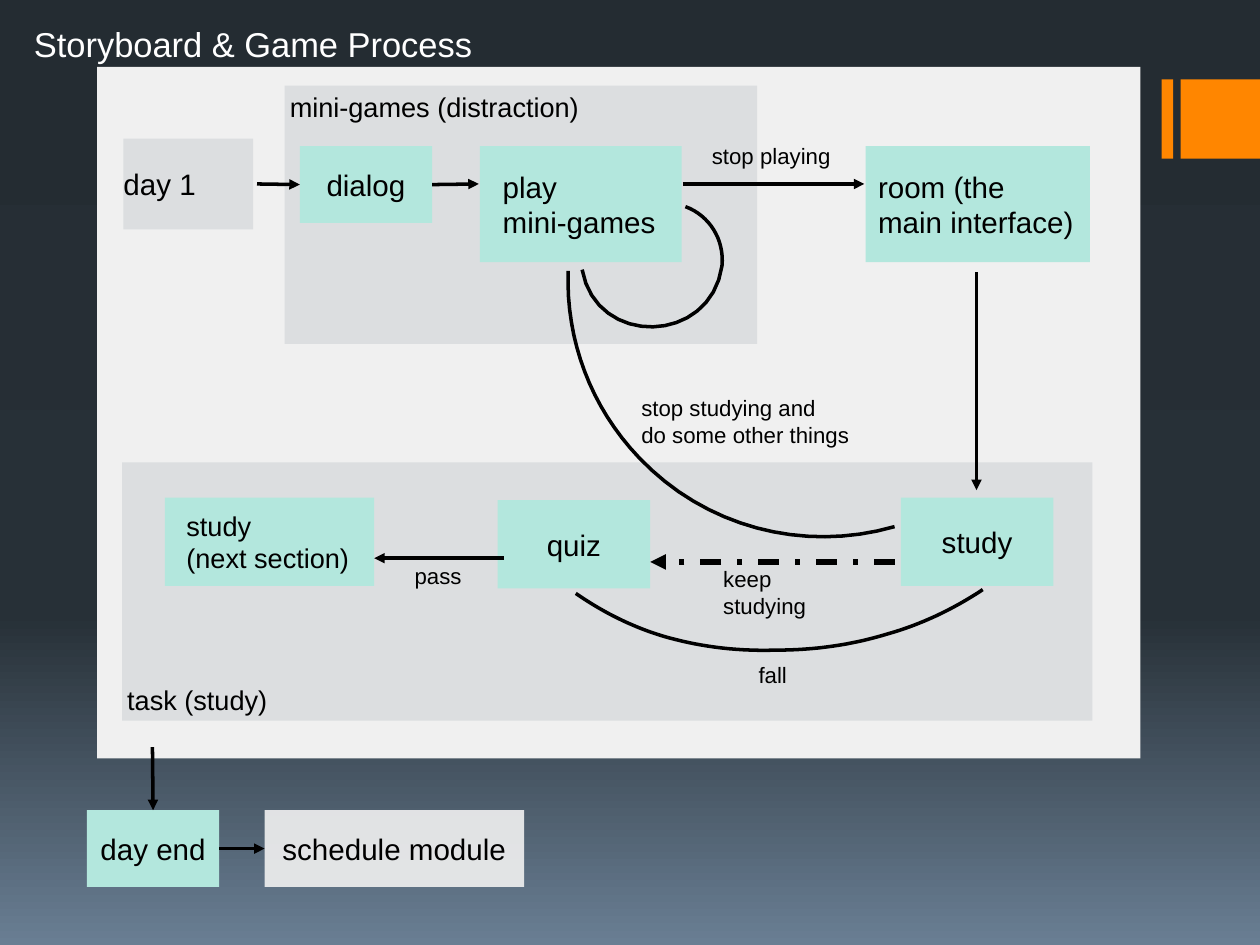
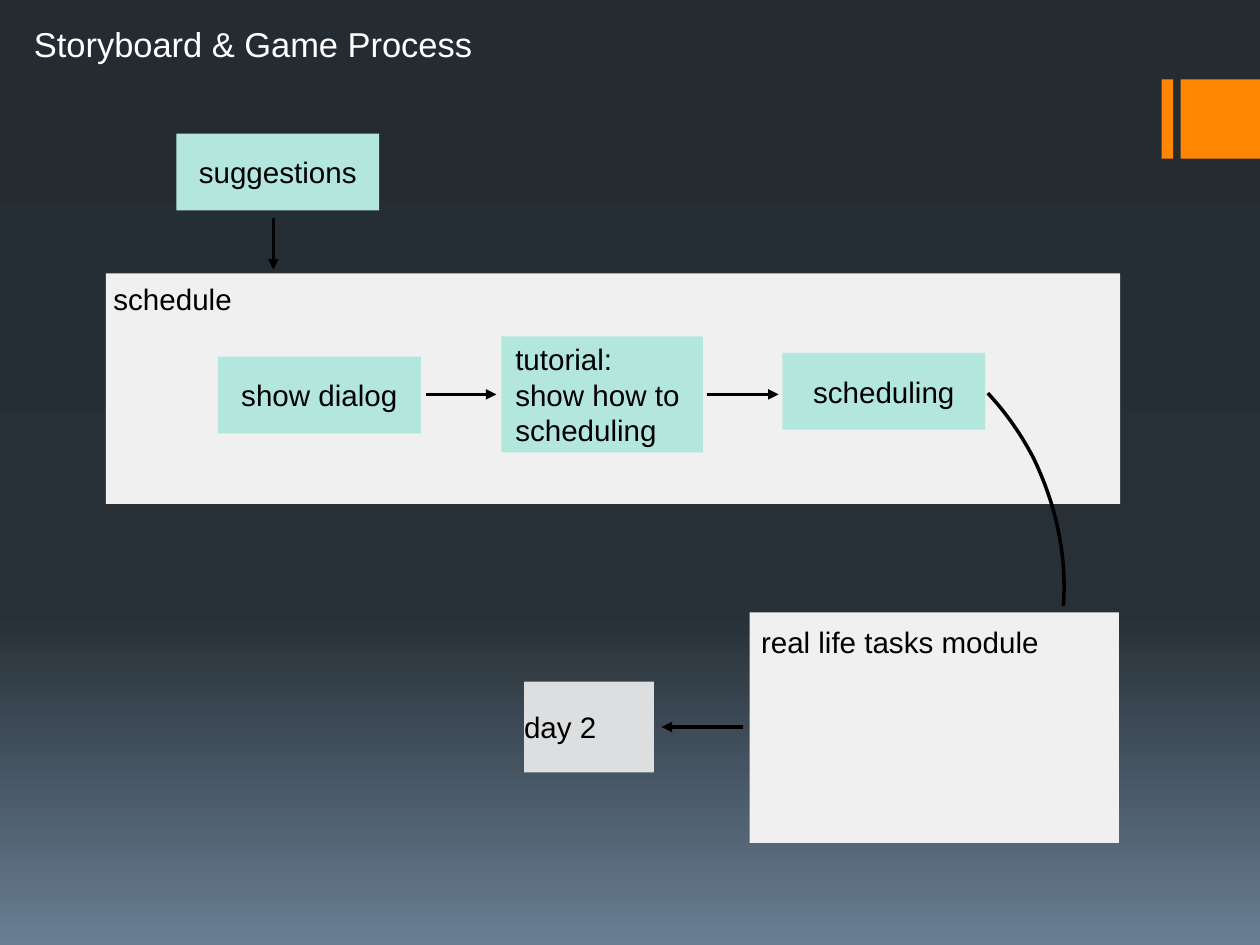
from lxml.etree import SubElement
from copy import deepcopy
from pptx import Presentation
from pptx.dml.color import RGBColor
from pptx.enum.dml import MSO_LINE
from pptx.enum.shapes import MSO_CONNECTOR, MSO_SHAPE
from pptx.enum.text import MSO_ANCHOR, PP_ALIGN
from pptx.oxml.ns import qn
from pptx.util import Inches, Pt

WHITE = RGBColor(0xFF, 0xFF, 0xFF)
BLACK = RGBColor(0x00, 0x00, 0x00)
ORANGE = RGBColor(0xFF, 0x86, 0x00)
MINT = RGBColor(0xB3, 0xE7, 0xDD)
PALE = RGBColor(0xF0, 0xF0, 0xF0)
GREY = RGBColor(0xDC, 0xDE, 0xE0)
BACKGROUND_STOPS = [
    (0, RGBColor(0x24, 0x2C, 0x32)),
    (0.65, RGBColor(0x27, 0x30, 0x37)),
    (1, RGBColor(0x69, 0x7E, 0x93)),
]
FONT = "Arial"
TITLE_SIZE, NODE_SIZE, GROUP_SIZE, LABEL_SIZE = 19.7, 16.9, 15.5, 12.7
TOP, MIDDLE, BOTTOM = MSO_ANCHOR.TOP, MSO_ANCHOR.MIDDLE, MSO_ANCHOR.BOTTOM
SIDE_TOP, SIDE_LEFT, SIDE_RIGHT = 0, 1, 3
CURVE_STEPS = 16

presentation = Presentation()
presentation.slide_width = Inches(10)
presentation.slide_height = Inches(7.5)
COLUMN = presentation.slide_width // 100
ROW = presentation.slide_height // 75


def add_box(slide, text, left, top, width, height, fill=MINT, size=NODE_SIZE,
            indent=None, anchor=MIDDLE, color=BLACK):
    place = (round(left * COLUMN), round(top * ROW), round(width * COLUMN), round(height * ROW))
    if fill is None:
        shape = slide.shapes.add_textbox(*place)
    else:
        shape = slide.shapes.add_shape(MSO_SHAPE.RECTANGLE, *place)
        shape.shadow.inherit = False
        shape.fill.solid()
        shape.fill.fore_color.rgb = fill
        shape.line.fill.background()
    if text:
        frame = shape.text_frame
        frame.word_wrap = True
        frame.vertical_anchor = anchor
        frame.margin_left = round((indent or 0) * COLUMN)
        frame.margin_right = 0
        frame.margin_top = frame.margin_bottom = 0 if anchor == MIDDLE else frame.margin_left
        frame.text = text
        for paragraph in frame.paragraphs:
            paragraph.alignment = PP_ALIGN.CENTER if indent is None else PP_ALIGN.LEFT
            paragraph.font.name = FONT
            paragraph.font.size = Pt(size)
            paragraph.font.color.rgb = color
    return shape


def add_arrow(slide, start_x, start_y, end_x, end_y, begin=None, end=None):
    arrow = slide.shapes.add_connector(
        MSO_CONNECTOR.STRAIGHT, round(start_x * COLUMN), round(start_y * ROW),
        round(end_x * COLUMN), round(end_y * ROW))
    if begin:
        arrow.begin_connect(*begin)
    if end:
        arrow.end_connect(*end)
    arrow.line.color.rgb = BLACK
    arrow.line.width = Pt(2)
    SubElement(arrow.line._get_or_add_ln(), qn("a:tailEnd"), type="triangle")
    SubElement(arrow._element.spPr, qn("a:effectLst"))
    return arrow


master = presentation.slide_master
background = master.background.fill
background.gradient()
background.gradient_angle = 270
stop_list = master.element.xpath("p:cSld/p:bg//a:gsLst")[0]
stop_list.append(deepcopy(stop_list[0]))
for stop, (position, color) in zip(background.gradient_stops, BACKGROUND_STOPS):
    stop.position = position
    stop.color.rgb = color

process_boxes = [
    ("", 7.7, 5.3, 82.8, 54.9, PALE),
    ("task (study)", 9.7, 36.7, 77, 20.5, GREY, GROUP_SIZE, 0.4, BOTTOM),
    ("mini-games (distraction)", 22.6, 6.8, 37.5, 20.5, GREY, GROUP_SIZE, 0.4, TOP),
    ("day 1", 9.8, 11, 10.3, 7.2, GREY, NODE_SIZE, 0),
    ("dialog", 23.8, 11.6, 10.5, 6.1),
    ("play\nmini-games", 38.1, 11.6, 16, 9.2, MINT, NODE_SIZE, 1.8),
    ("room (the\nmain interface)", 68.7, 11.6, 17.8, 9.2, MINT, NODE_SIZE, 1),
    ("study\n(next section)", 13.1, 39.5, 16.6, 7, MINT, GROUP_SIZE, 1.7),
    ("quiz", 39.5, 39.7, 12.1, 7),
    ("study", 71.5, 39.5, 12.1, 7),
    ("day end", 6.9, 64.3, 10.5, 6.1),
    ("schedule module", 21, 64.3, 20.6, 6.1, PALE),
    ("stop playing", 56.1, 10.9, 10.3, 2.9, None, LABEL_SIZE, 0.4),
    ("stop studying and\ndo some other things", 50.5, 30.9, 17.3, 5, None, LABEL_SIZE, 0.4),
    ("pass", 32.5, 44.2, 4.5, 2.9, None, LABEL_SIZE, 0.4),
    ("keep\nstudying", 57, 44.5, 7.4, 5, None, LABEL_SIZE, 0.4),
    ("fall", 59.8, 52.1, 3.1, 2.9, None, LABEL_SIZE, 0.4),
]
process_curves = [
    [(54.4, 16.4), (56.3, 17.1), (57.5, 19), (57.3, 21.1),
     (56.4, 27.4), (47.3, 27.6), (46.2, 21.4)],
    [(71, 41.8), (63.7, 43.9), (55.9, 41.8), (50.7, 36.3),
     (46.9, 32.3), (44.9, 27), (45.1, 21.5)],
    [(45.7, 47.1), (48, 48.7), (50.5, 49.9), (53, 50.6),
     (55.9, 51.4), (58.8, 51.7), (61.7, 51.6),
     (64.6, 51.6), (67.6, 51.2), (70.5, 50.3),
     (73, 49.6), (75.6, 48.4), (78, 46.8)],
]

schedule_boxes = [
    ("suggestions", 14, 10.6, 16.1, 6.1),
    ("schedule", 8.4, 21.7, 80.5, 18.3, PALE, NODE_SIZE, 0.6, TOP),
    ("show dialog", 17.3, 28.3, 16.1, 6.1),
    ("tutorial:\nshow how to\nscheduling", 39.8, 26.7, 16, 9.2, MINT, NODE_SIZE, 1.1),
    ("scheduling", 62.1, 28, 16.1, 6.1),
    ("real life tasks module", 59.5, 48.6, 29.3, 18.3, PALE, NODE_SIZE, 0.9, TOP),
    ("day 2", 41.6, 54.1, 10.3, 7.2, GREY, NODE_SIZE, 0),
]
schedule_curves = [
    [(78.4, 31.2), (79.8, 32.7), (81, 34.4), (82, 36.3),
     (83.8, 40), (84.7, 44), (84.4, 48.1)],
]

pages = []
for boxes, curves in [(process_boxes, process_curves), (schedule_boxes, schedule_curves)]:
    slide = presentation.slides.add_slide(presentation.slide_layouts[6])
    for left, width in [(92.2, 0.9), (93.7, 6.3)]:
        add_box(slide, "", left, 6.3, width, 6.3, ORANGE)
    nodes = {box[0]: add_box(slide, *box) for box in boxes}
    add_box(slide, "Storyboard & Game Process", 2.3, 1.4, 36, 4.1, None, TITLE_SIZE, 0.4,
            color=WHITE)
    for points in curves:
        start_x, start_y = points[0]
        builder = slide.shapes.build_freeform(round(start_x * COLUMN), round(start_y * ROW))
        vertices = []
        for first in range(0, len(points) - 1, 3):
            for step in range(1, CURVE_STEPS + 1):
                t = step / CURVE_STEPS
                weights = ((1 - t) ** 3, 3 * t * (1 - t) ** 2, 3 * t ** 2 * (1 - t), t ** 3)
                segment = list(zip(weights, points[first:first + 4]))
                vertices.append((round(sum(weight * x for weight, (x, y) in segment) * COLUMN),
                                 round(sum(weight * y for weight, (x, y) in segment) * ROW)))
        builder.add_line_segments(vertices, close=False)
        curve = builder.convert_to_shape()
        curve.shadow.inherit = False
        curve.fill.background()
        curve.line.color.rgb = BLACK
        curve.line.width = Pt(2)
    pages.append((slide, nodes))

process_slide, nodes = pages[0]
module_color = nodes["schedule module"]._element.spPr.find(qn("a:solidFill"))[0]
SubElement(module_color, qn("a:alpha"), val="91000")

dialog, day_end = nodes["dialog"], nodes["day end"]
for arrow in [
    (20.4, 14.6, 23.8, 14.6, None, (dialog, SIDE_LEFT)),
    (34.3, 14.6, 38, 14.6, (dialog, SIDE_RIGHT)),
    (54.2, 14.6, 68.6, 14.6),
    (77.5, 21.6, 77.5, 38.9),
    (40, 44.3, 29.7, 44.3),
    (12.1, 59.3, 12.1, 64.3, None, (day_end, SIDE_TOP)),
    (17.4, 67.3, 21, 67.3, (day_end, SIDE_RIGHT), (nodes["schedule module"], SIDE_LEFT)),
]:
    add_arrow(process_slide, *arrow)
keep_studying = add_arrow(process_slide, 71, 44.6, 51.6, 44.6)
keep_studying.line.width = Pt(3)
keep_studying.line.dash_style = MSO_LINE.DASH_DOT

schedule_slide, nodes = pages[1]
for arrow in [
    (21.7, 17.3, 21.7, 21.4),
    (33.8, 31.3, 39.4, 31.3),
    (56.1, 31.3, 61.8, 31.3),
    (59, 57.7, 52.5, 57.7),
]:
    add_arrow(schedule_slide, *arrow)

presentation.save("out.pptx")
